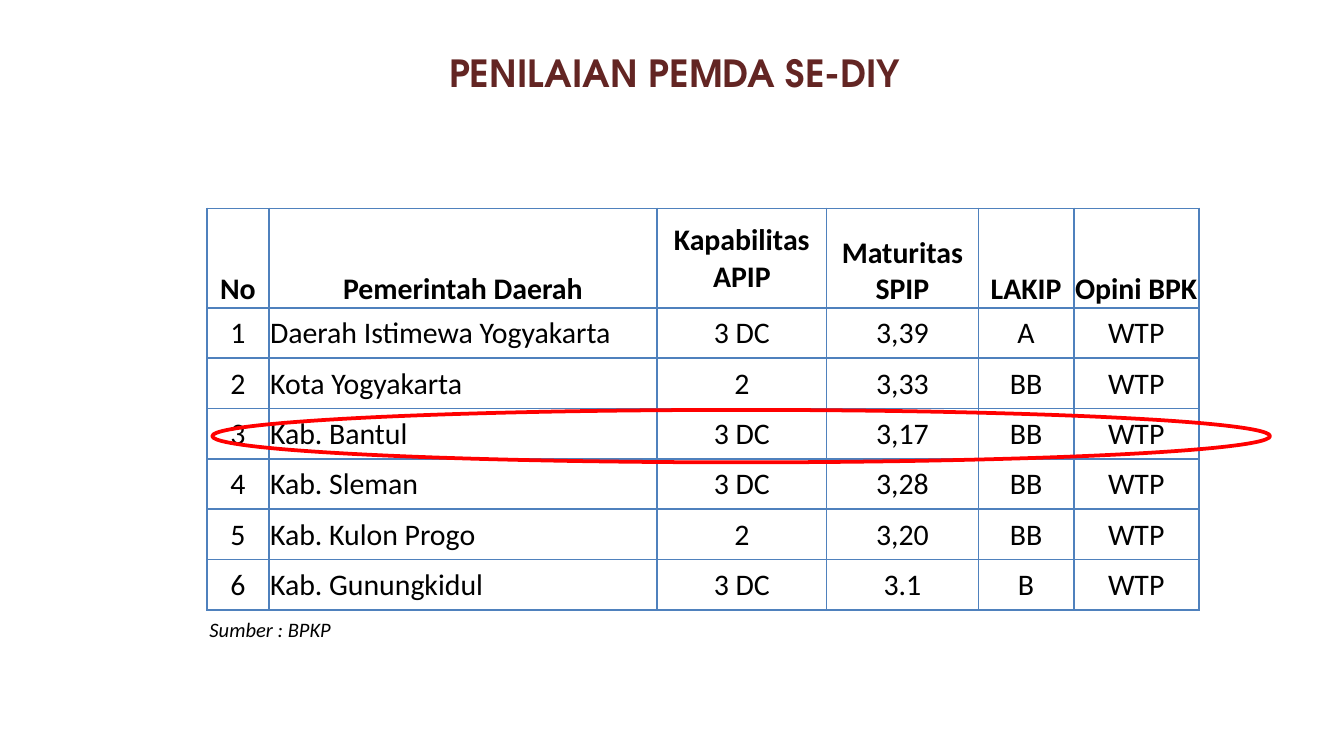
from dataclasses import dataclass

from lxml import etree
from pptx import Presentation
from pptx import util as u
from pptx.dml.color import RGBColor
from pptx.enum import shapes, text
from pptx.oxml import ns


@dataclass(frozen=True)
class Theme:
    """Colours, fonts and type sizes of the slide."""
    ink: str = "000000"
    title: str = "632523"
    grid: str = "4F81BD"
    mark: str = "FF0000"
    title_font: str = "TeX Gyre Adventor"
    body_font: str = "Calibri"
    title_size: int = 20
    table_size: int = 16
    source_size: int = 11


THEME = Theme()
HEADINGS = ["No", "Pemerintah Daerah", "Kapabilitas APIP", "Maturitas SPIP", "LAKIP", "Opini BPK"]
RATINGS = [
    ["1", "Daerah Istimewa Yogyakarta", "3 DC", "3,39", "A", "WTP"],
    ["2", "Kota Yogyakarta", "2", "3,33", "BB", "WTP"],
    ["3", "Kab. Bantul", "3 DC", "3,17", "BB", "WTP"],
    ["4", "Kab. Sleman", "3 DC", "3,28", "BB", "WTP"],
    ["5", "Kab. Kulon Progo", "2", "3,20", "BB", "WTP"],
    ["6", "Kab. Gunungkidul", "3 DC", "3.1", "B", "WTP"],
]
COLUMN_WIDTHS = [0.46, 2.89, 1.26, 1.13, 0.71, 0.93]
HEADER_HEIGHT = 0.74
NAME_COLUMN = 1
RAISED_HEADING = 2


def write(frame, words, size, font, colour, align=text.PP_ALIGN.LEFT, bold=False, italic=False):
    """Write one styled line into the first paragraph of a text frame."""
    para = frame.paragraphs[0]
    para.alignment = align
    span = para.add_run()
    span.text = words
    span.font.size = u.Pt(size)
    span.font.name = font
    span.font.bold = bold
    span.font.italic = italic
    span.font.color.rgb = RGBColor.from_string(colour)


def outline_cell(cell):
    """Draw a thin grid line on all four sides of a cell."""
    properties = cell._tc.get_or_add_tcPr()
    for position, side in enumerate(("lnL", "lnR", "lnT", "lnB")):
        line = etree.Element(ns.qn(f"a:{side}"), w=str(u.Pt(1)))
        fill = etree.SubElement(line, ns.qn("a:solidFill"))
        etree.SubElement(fill, ns.qn("a:srgbClr"), val=THEME.grid)
        properties.insert(position, line)


def add_title(page, left, top, width, height):
    """Place the centred slide title in the given box."""
    box = page.shapes.add_textbox(*map(u.Inches, (left, top, width, height)))
    box.text_frame.word_wrap = True
    box.text_frame.vertical_anchor = text.MSO_ANCHOR.MIDDLE
    write(box.text_frame, "PENILAIAN PEMDA SE-DIY", THEME.title_size, THEME.title_font,
          THEME.title, text.PP_ALIGN.CENTER, bold=True)


def fill_cell(cell, words, row, column):
    """Style one cell by its place in the table and write its text."""
    heading = row == 0
    low = heading and column != RAISED_HEADING
    left_aligned = column == NAME_COLUMN and not heading
    cell.fill.background()
    cell.margin_left = cell.margin_right = cell.margin_top = u.Inches(0.01)
    cell.margin_bottom = 0
    cell.vertical_anchor = text.MSO_ANCHOR.BOTTOM if low else text.MSO_ANCHOR.MIDDLE
    align = text.PP_ALIGN.LEFT if left_aligned else text.PP_ALIGN.CENTER
    write(cell.text_frame, words, THEME.table_size, THEME.body_font, THEME.ink, align, bold=heading)
    outline_cell(cell)


def add_ratings(page, left, top, width, height):
    """Place the table of ratings in the given box."""
    records = [HEADINGS, *RATINGS]
    frame = page.shapes.add_table(len(records), len(HEADINGS),
                                  *map(u.Inches, (left, top, width, height)))
    table = frame.table
    table.first_row = table.horz_banding = False
    for column, size in zip(table.columns, COLUMN_WIDTHS):
        column.width = u.Inches(size)
    body_height = (height - HEADER_HEIGHT) / len(RATINGS)
    for index, (row, record) in enumerate(zip(table.rows, records)):
        row.height = u.Inches(body_height if index else HEADER_HEIGHT)
        for column, words in enumerate(record):
            fill_cell(table.cell(index, column), words, index, column)


def add_highlight(page, left, top, width, height):
    """Ring the highlighted row with an unfilled ellipse."""
    ring = page.shapes.add_shape(shapes.MSO_SHAPE.OVAL, *map(u.Inches, (left, top, width, height)))
    ring.shadow.inherit = False
    ring.fill.background()
    ring.line.color.rgb = RGBColor.from_string(THEME.mark)
    ring.line.width = u.Pt(2)


def add_source(page, left, top, width, height):
    """Place the source note in the given box."""
    box = page.shapes.add_textbox(*map(u.Inches, (left, top, width, height)))
    box.text_frame.word_wrap = False
    box.text_frame.auto_size = text.MSO_AUTO_SIZE.SHAPE_TO_FIT_TEXT
    write(box.text_frame, "Sumber : BPKP", THEME.source_size, THEME.body_font, THEME.ink, italic=True)


def main():
    """Build the slide and save the deck."""
    deck = Presentation()
    deck.slide_width = u.Inches(10)
    deck.slide_height = deck.slide_width * 9 // 16
    page = deck.slides.add_slide(deck.slide_layouts[6])
    add_ratings(page, 1.54, 1.55, sum(COLUMN_WIDTHS), 2.99)
    add_title(page, 1.83, 0.15, 6.38, 0.78)
    add_highlight(page, 1.58, 3.05, 7.87, 0.39)
    add_source(page, 1.46, 4.54, 1.11, 0.29)
    deck.save("out.pptx")


if __name__ == "__main__":
    main()
